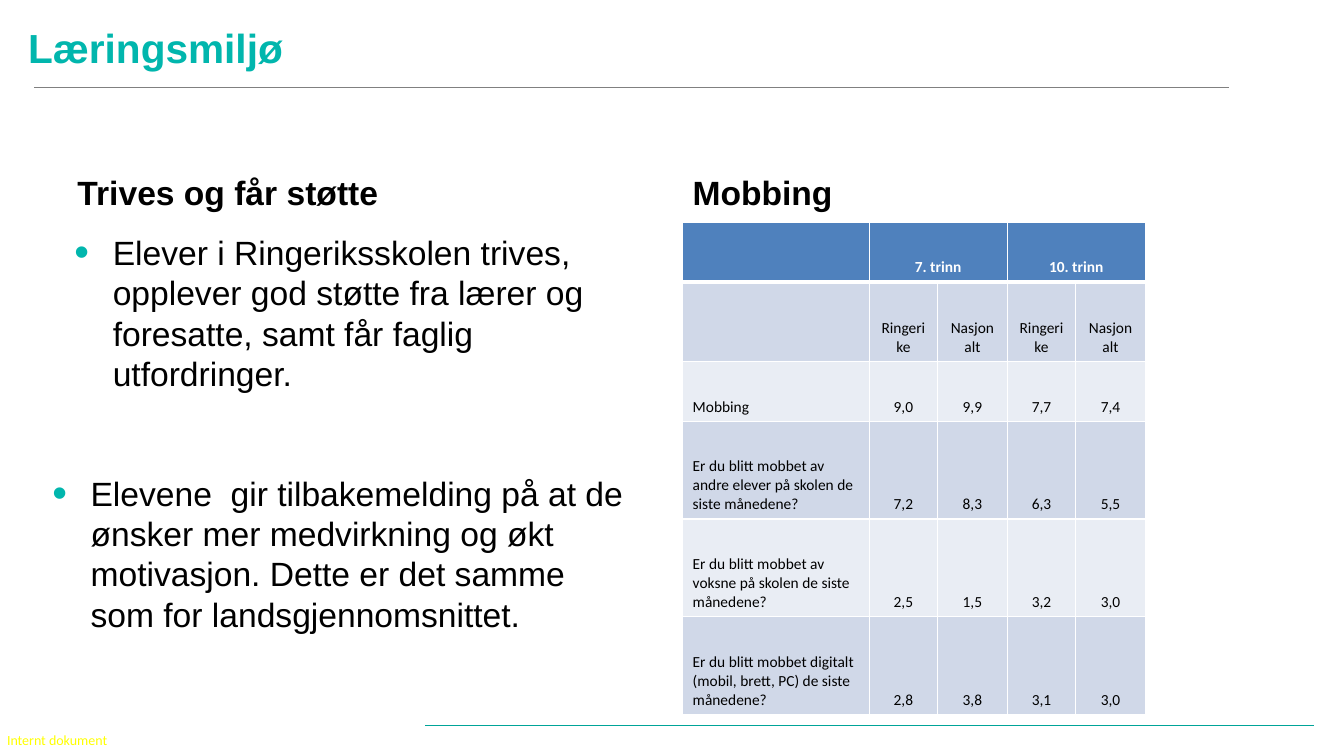
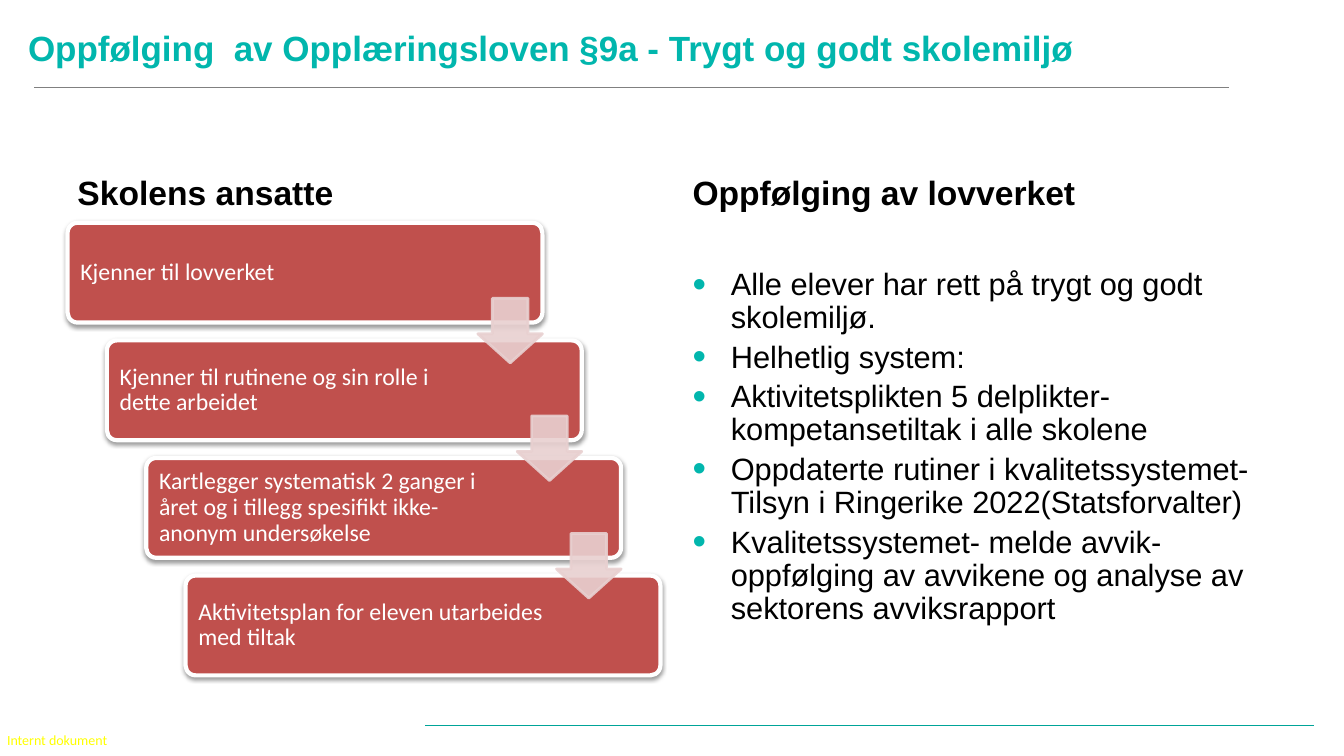
from lxml import etree
from pptx import Presentation
from pptx import util as u
from pptx.dml import color
from pptx.enum import shapes, text
from pptx.oxml import ns

# Shared palette and fonts
TEAL, GREY, LINE_TEAL, YELLOW = "01B6AD", "808080", "00A498", "FFFF00"
BLACK, WHITE, RED, PINK = "000000", "FFFFFF", "C0504D", "E8D0D0"
HEADER_BLUE, BAND_DARK, BAND_LIGHT = "4F81BD", "D0D8E8", "E9EDF4"
HEAD_FONT, SMALL_FONT = "Arial", "Calibri"
INDENT = 0.38

# Shared column positions
LEFT_HEADING = (0.67, 1.35, 5.89, 0.8)
RIGHT_HEADING = (6.77, 1.35, 5.89, 0.8)


def rgb(code):
    return color.RGBColor.from_string(code)


def inches(box):
    return [u.Inches(value) for value in box]


def add_xml(parent, tag, **attributes):
    child = etree.SubElement(parent, ns.qn(tag))
    for name, value in attributes.items():
        child.set(name, str(value))
    return child


def style_para(para, size, code, font=HEAD_FONT, bold=False, spacing=None):
    if spacing:
        para.line_spacing = spacing
    para.font.size = u.Pt(size)
    para.font.name = font
    para.font.bold = bold
    para.font.color.rgb = rgb(code)


def add_text(page, box, words, size, code, anchor=text.MSO_ANCHOR.TOP, **style):
    label = page.shapes.add_textbox(*inches(box))
    frame = label.text_frame
    frame.word_wrap = True
    frame.vertical_anchor = anchor
    frame.text = words
    style_para(frame.paragraphs[0], size, code, **style)
    return frame


def add_rule(page, start, end, code, width):
    rule = page.shapes.add_connector(
        shapes.MSO_CONNECTOR.STRAIGHT, *inches(start + end))
    rule.line.color.rgb = rgb(code)
    rule.line.width = u.Pt(width)
    add_xml(rule._element.spPr, "a:effectLst")


def add_page(deck, title, size):
    """A blank page with footer, rules and title."""
    page = deck.slides.add_slide(deck.slide_layouts[6])
    footer = add_text(page, (0.07, 7.26, 1.04, 0.17), "Internt dokument",
                      10, YELLOW, font=SMALL_FONT)
    footer.margin_left = footer.margin_right = 0
    footer.margin_top = footer.margin_bottom = 0
    add_rule(page, (0.34, 0.87), (12.19, 0.87), GREY, 0.5)
    add_rule(page, (13.03, 7.2), (4.22, 7.2), LINE_TEAL, 0.75)
    add_text(page, (0.18, 0.22, 11.24, 0.56), title, size, TEAL,
             text.MSO_ANCHOR.MIDDLE, bold=True, spacing=0.9)
    return page


def add_heading(page, box, words):
    add_text(page, box, words, 24, BLACK, text.MSO_ANCHOR.BOTTOM, bold=True)


def add_bullets(page, box, items, size, spacing=None):
    frame = page.shapes.add_textbox(*inches(box)).text_frame
    frame.word_wrap = True
    for index, item in enumerate(items):
        para = frame.add_paragraph() if index else frame.paragraphs[0]
        para.text = item
        props = para._p.get_or_add_pPr()
        props.set("marL", str(u.Inches(INDENT)))
        props.set("indent", str(-u.Inches(INDENT)))
        add_xml(add_xml(props, "a:buClr"), "a:srgbClr", val=TEAL)
        add_xml(props, "a:buSzPct", val=125000)
        add_xml(props, "a:buFont", typeface=HEAD_FONT)
        add_xml(props, "a:buChar", char="•")
        if index:
            para.space_before = u.Pt(size * 0.2)
        style_para(para, size, BLACK, spacing=spacing)


def border_cell(cell, bottom_width):
    props = cell._tc.get_or_add_tcPr()
    widths = {"a:lnL": 1, "a:lnR": 1, "a:lnT": 1, "a:lnB": bottom_width}
    for place, (tag, width) in enumerate(widths.items()):
        edge = etree.Element(ns.qn(tag), w=str(u.Pt(width)))
        add_xml(add_xml(edge, "a:solidFill"), "a:srgbClr", val=WHITE)
        props.insert(place, edge)


def add_bullying_table(page, left, top, rows):
    widths = [1.85, 0.68, 0.69, 0.68, 0.69]
    heights = [0.59, 0.79, 0.59, 0.97, 0.97, 0.97]
    box = (left, top, sum(widths), sum(heights))
    table = page.shapes.add_table(len(rows), len(widths), *inches(box)).table
    for column, width in zip(table.columns, widths):
        column.width = u.Inches(width)
    for row, height in zip(table.rows, heights):
        row.height = u.Inches(height)
    for r, row in enumerate(rows):
        header = r == 0
        fill = HEADER_BLUE if header else BAND_DARK if r % 2 else BAND_LIGHT
        for c, words in enumerate(row):
            cell = table.cell(r, c)
            cell.fill.solid()
            cell.fill.fore_color.rgb = rgb(fill)
            border_cell(cell, 3 if header else 1)
            cell.vertical_anchor = text.MSO_ANCHOR.BOTTOM
            cell.text = words
            para = cell.text_frame.paragraphs[0]
            para.alignment = text.PP_ALIGN.CENTER if c else text.PP_ALIGN.LEFT
            style_para(para, 11, WHITE if header else BLACK, SMALL_FONT, header)
    for c in (1, 3):
        table.cell(0, c).merge(table.cell(0, c + 1))


def add_block(page, kind, box, adjustments, fill, line, width):
    block = page.shapes.add_shape(kind, *inches(box))
    block.shadow.inherit = False
    for index, value in enumerate(adjustments):
        block.adjustments[index] = value
    block.fill.solid()
    block.fill.fore_color.rgb = rgb(fill)
    block.line.color.rgb = rgb(line)
    block.line.width = u.Pt(width)
    return block


def add_card(page, box, words):
    card = add_block(page, shapes.MSO_SHAPE.ROUNDED_RECTANGLE, box, [0.1],
                     RED, WHITE, 3)
    effects = card._element.spPr.find(ns.qn("a:effectLst"))
    shadow = add_xml(effects, "a:outerShdw", blurRad=u.Pt(3.1), dist=u.Pt(1.6),
                     dir=90 * 60000, rotWithShape=0)
    add_xml(add_xml(shadow, "a:srgbClr", val=BLACK), "a:alpha", val=38000)
    frame = card.text_frame
    frame.word_wrap = True
    frame.vertical_anchor = text.MSO_ANCHOR.MIDDLE
    frame.margin_left = frame.margin_top = frame.margin_bottom = u.Inches(0.1)
    frame.margin_right = u.Inches(1.13)
    frame.text = words
    frame.paragraphs[0].alignment = text.PP_ALIGN.LEFT
    style_para(frame.paragraphs[0], 17, WHITE, SMALL_FONT, spacing=0.9)


def add_staircase(page, box, steps):
    """Cards stepping down to the right, with an arrow between each pair."""
    left, top, width, height = box
    card_width, card_height, arrow_size = 4.71, 0.99, 0.64
    gaps = len(steps) - 1
    step_x, step_y = (width - card_width) / gaps, (height - card_height) / gaps
    corners = [(left + i * step_x, top + i * step_y) for i in range(len(steps))]
    for (x, y), words in zip(corners, steps):
        add_card(page, (x, y, card_width, card_height), words)
    for x, y in corners[:-1]:
        arrow_box = (x + card_width - arrow_size, y + 0.75, arrow_size, arrow_size)
        arrow = add_block(page, shapes.MSO_SHAPE.DOWN_ARROW, arrow_box,
                          [0.55, 0.45], PINK, PINK, 2)
        for paint in arrow._element.spPr.iter(ns.qn("a:srgbClr")):
            add_xml(paint, "a:alpha", val=90000)


def build_environment(deck):
    page = add_page(deck, "Læringsmiljø", 29)
    add_heading(page, LEFT_HEADING, "Trives og får støtte")
    add_bullets(page, (0.64, 2.25, 5.92, 2.28), [
        "Elever i Ringeriksskolen trives, opplever god støtte fra lærer og "
        "foresatte, samt får faglig utfordringer."], 24)
    add_heading(page, RIGHT_HEADING, "Mobbing")
    add_bullying_table(page, 6.77, 2.21, [
        ["", "7. trinn", "", "10. trinn", ""],
        ["", "Ringerike", "Nasjonalt", "Ringerike", "Nasjonalt"],
        ["Mobbing", "9,0", "9,9", "7,7", "7,4"],
        ["Er du blitt mobbet av andre elever på skolen de siste månedene?",
         "7,2", "8,3", "6,3", "5,5"],
        ["Er du blitt mobbet av voksne på skolen de siste månedene?",
         "2,5", "1,5", "3,2", "3,0"],
        ["Er du blitt mobbet digitalt (mobil, brett, PC) de siste månedene?",
         "2,8", "3,8", "3,1", "3,0"],
    ])
    add_bullets(page, (0.42, 4.64, 5.92, 2.28), [
        "Elevene  gir tilbakemelding på at de ønsker mer medvirkning og økt "
        "motivasjon. Dette er det samme som for landsgjennomsnittet."], 24)


def build_follow_up(deck):
    page = add_page(
        deck, "Oppfølging  av Opplæringsloven §9a - Trygt og godt skolemiljø", 25)
    add_heading(page, LEFT_HEADING, "Skolens ansatte")
    add_heading(page, RIGHT_HEADING, "Oppfølging av lovverket")
    add_bullets(page, (6.77, 2.62, 5.89, 4.08), [
        "Alle elever har rett på trygt og godt skolemiljø.",
        "Helhetlig system:",
        "Aktivitetsplikten 5 delplikter- kompetansetiltak i alle skolene",
        "Oppdaterte rutiner i kvalitetssystemet- Tilsyn i Ringerike "
        "2022(Statsforvalter)",
        "Kvalitetssystemet- melde avvik-oppfølging av avvikene og analyse av "
        "sektorens avviksrapport",
    ], 22, 0.9)
    add_staircase(page, (0.67, 2.21, 5.88, 4.49), [
        "Kjenner til lovverket",
        "Kjenner til rutinene og sin rolle i dette arbeidet",
        "Kartlegger systematisk 2 ganger i året og i tillegg spesifikt "
        "ikke-anonym undersøkelse",
        "Aktivitetsplan for eleven utarbeides med tiltak",
    ])


def main():
    deck = Presentation()
    deck.slide_width, deck.slide_height = inches((13.33, 7.5))
    build_environment(deck)
    build_follow_up(deck)
    deck.save("out.pptx")


if __name__ == "__main__":
    main()
